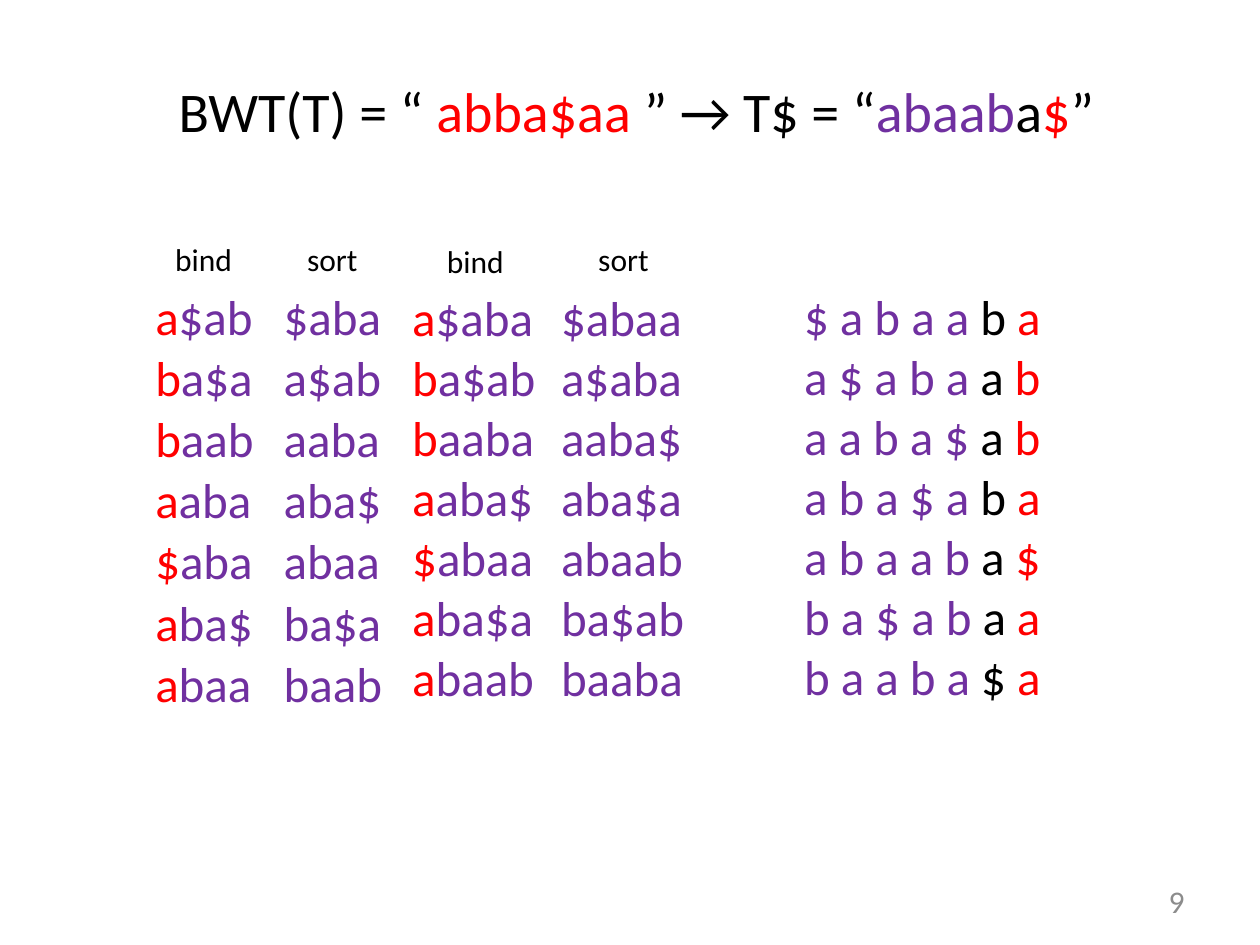
from pptx import Presentation
from pptx.dml.color import RGBColor
from pptx.enum.text import MSO_ANCHOR, PP_ALIGN
from pptx.util import Cm, Pt

MIDDLE = MSO_ANCHOR.MIDDLE
LEFT, CENTER, RIGHT = PP_ALIGN.LEFT, PP_ALIGN.CENTER, PP_ALIGN.RIGHT
FONT = "Calibri"
BLACK, RED, PURPLE, GREY = "000000", "FF0000", "7030A0", "8C8C8C"

# Content
TITLE = [(" BWT(T) = “ ", BLACK), ("abba$aa ", RED), ("” → T$ = “", BLACK),
         ("abaab", PURPLE), ("a", BLACK), ("$", RED), ("”", BLACK)]
PAGE_NUMBER = "9"

# Colour pattern of a row: (colour, number of characters); None takes the rest
BOUND = [(RED, 1), (PURPLE, None)]
SORTED = [(PURPLE, None)]
ROTATED = [(PURPLE, 10), (BLACK, 2), (RED, None)]

# Columns: left, top, width, row height (cm), colour pattern, strings
COLUMNS = [
    (3.1, 5.82, 2.44, 1.23, BOUND,
     ["a$ab", "ba$a", "baab", "aaba", "$aba", "aba$", "abaa"]),
    (5.69, 5.82, 2.21, 1.23, SORTED,
     ["$aba", "a$ab", "aaba", "aba$", "abaa", "ba$a", "baab"]),
    (8.28, 5.84, 2.59, 1.21, BOUND,
     ["a$aba", "ba$ab", "baaba", "aaba$", "$abaa", "aba$a", "abaab"]),
    (11.28, 5.84, 2.59, 1.21, SORTED,
     ["$abaa", "a$aba", "aaba$", "aba$a", "abaab", "ba$ab", "baaba"]),
    (16.18, 5.82, 5.0, 1.21, ROTATED,
     ["$ a b a a b a", "a $ a b a a b", "a a b a $ a b", "a b a $ a b a",
      "a b a a b a $", "b a $ a b a a", "b a a b a $ a"]),
]

# Labels: text, left, top, width (cm)
LABELS = [("bind", 3.28, 4.72, 1.68), ("sort", 5.94, 4.72, 1.55),
          ("bind", 8.76, 4.75, 1.68), ("sort", 11.81, 4.72, 1.55)]


def write(frame, spans, size, align=LEFT):
    """Fill a text frame with one paragraph of (text, colour) spans."""
    para = frame.paragraphs[0]
    para.alignment = align
    for text, colour in spans:
        span = para.add_run()
        span.text = text
        span.font.name = FONT
        span.font.size = Pt(size)
        span.font.bold = False
        span.font.color.rgb = RGBColor.from_string(colour)


def add_text(page, text, left, top, width, colour=BLACK, align=LEFT, wrap=False):
    box = page.shapes.add_textbox(Cm(left), Cm(top), Cm(width), Cm(1.02))
    box.text_frame.word_wrap = wrap
    box.text_frame.vertical_anchor = MIDDLE
    write(box.text_frame, [(text, colour)], 18, align)


def colour_spans(text, pattern):
    """Cut a string into coloured pieces by the pattern's lengths."""
    spans, start = [], 0
    for colour, length in pattern:
        end = len(text) if length is None else start + length
        spans.append((text[start:end], colour))
        start = end
    return spans


def add_column(page, left, top, width, row_height, pattern, strings):
    table = page.shapes.add_table(
        len(strings), 1, Cm(left), Cm(top), Cm(width), Cm(row_height * len(strings))).table
    table.first_row = table.horz_banding = False
    for row, text in zip(table.rows, strings):
        row.height = Cm(row_height)
        cell = row.cells[0]
        cell.fill.background()
        cell.vertical_anchor = MIDDLE
        cell.margin_left = cell.margin_right = Cm(0.03)
        cell.margin_top = cell.margin_bottom = 0
        write(cell.text_frame, colour_spans(text, pattern), 28)


def main():
    deck = Presentation()
    deck.slide_width, deck.slide_height = Cm(25.4), Cm(19.05)
    page = deck.slides.add_slide(deck.slide_layouts[5])

    # Title
    title = page.shapes.title
    title.left, title.top, title.width, title.height = Cm(1.27), Cm(0.64), Cm(22.86), Cm(3.18)
    title.text_frame.vertical_anchor = MIDDLE
    write(title.text_frame, TITLE, 32, CENTER)

    # Columns of strings with their labels
    for column in COLUMNS:
        add_column(page, *column)
    for label in LABELS:
        add_text(page, *label)

    # Page number
    add_text(page, PAGE_NUMBER, 18.21, 17.65, 5.92, colour=GREY, align=RIGHT, wrap=True)

    deck.save("out.pptx")


if __name__ == "__main__":
    main()
